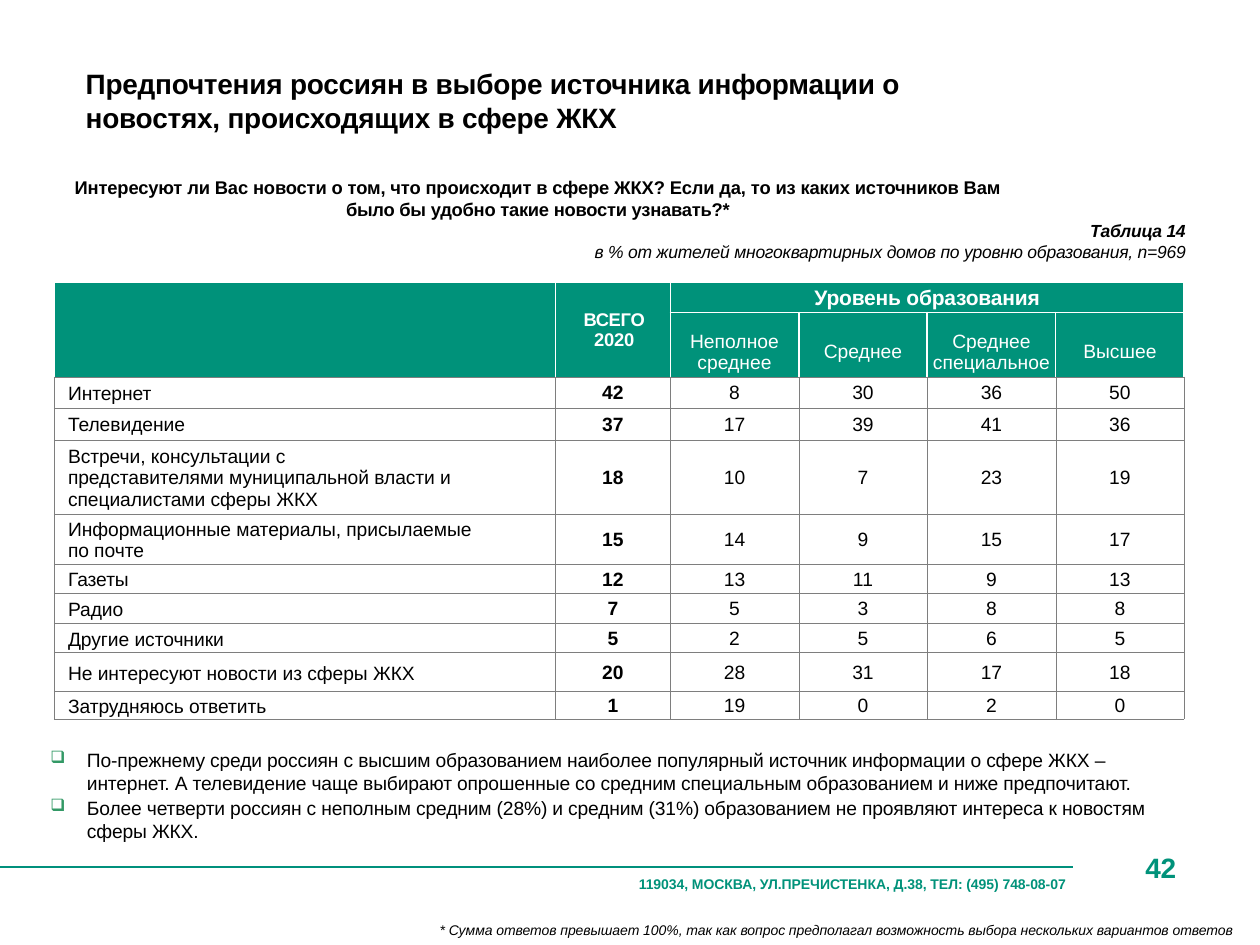
"""Build a slide on the sources people prefer for housing news, by education."""
from dataclasses import dataclass, field

from lxml import etree
from pptx import Presentation
from pptx.dml.color import RGBColor
from pptx.enum.shapes import MSO_CONNECTOR
from pptx.enum.text import MSO_ANCHOR, PP_ALIGN
from pptx.oxml.ns import qn
from pptx.util import Inches, Pt

LEFT, CENTER, RIGHT = PP_ALIGN.LEFT, PP_ALIGN.CENTER, PP_ALIGN.RIGHT
MIDDLE = MSO_ANCHOR.MIDDLE
STRAIGHT = MSO_CONNECTOR.STRAIGHT
GREEN, RULE, BULLET = "00927A", "00907C", "339966"
BLACK, WHITE, GREY = "000000", "FFFFFF", "7E7E7E"


@dataclass
class Para:
    text: str
    size: float
    bold: bool = False
    italic: bool = False
    color: str = BLACK
    align: int = LEFT
    spacing: int = -10
    before: float = 0
    bullet: str = ""


@dataclass
class Block:
    left: float
    top: float
    width: float
    height: float
    paras: list[Para]


@dataclass
class Row:
    label: str
    height: float
    values: list[int] = field(default_factory=list)


BLOCKS = [
    Block(0.68, 0.53, 6.61, 0.56, [
        Para("Предпочтения россиян в выборе источника информации о новостях, "
             "происходящих в сфере ЖКХ", 16, bold=True)]),
    Block(0.5, 1.4, 7.54, 0.35, [
        Para("Интересуют ли Вас новости о том, что происходит в сфере ЖКХ? "
             "Если да, то из каких источников Вам", 10.5, bold=True, align=CENTER, spacing=-5),
        Para("было бы удобно такие новости узнавать?*", 10.5, bold=True, align=CENTER)]),
    Block(0.5, 1.75, 8.91, 0.34, [
        Para("Таблица 14", 10, bold=True, italic=True, align=RIGHT),
        Para("в % от жителей многоквартирных домов по уровню образования, n=969",
             10, italic=True, align=RIGHT)]),
    Block(0.39, 5.94, 8.81, 0.75, [
        Para("По-прежнему среди россиян с высшим образованием наиболее популярный "
             "источник информации о сфере ЖКХ – интернет. А телевидение чаще выбирают "
             "опрошенные со средним специальным образованием и ниже предпочитают.",
             11, bullet="❑"),
        Para("Более четверти россиян с неполным средним (28%) и средним (31%) "
             "образованием не проявляют интереса к новостям сферы ЖКХ.",
             11, before=1, bullet="❑")]),
    Block(9.09, 6.75, 0.33, 0.28, [Para("42", 16, bold=True, color=GREEN)]),
    Block(5.07, 6.95, 3.48, 0.15, [
        Para("119034, МОСКВА, УЛ.ПРЕЧИСТЕНКА, Д.38, ТЕЛ: (495) 748-08-07",
             8, bold=True, color=GREEN, spacing=-5)]),
    Block(3.49, 7.31, 6.43, 0.15, [
        Para("* Сумма ответов превышает 100%, так как вопрос предполагал возможность "
             "выбора нескольких вариантов ответов", 8, italic=True, spacing=-5)]),
]
COLUMNS = [3.98, 0.91, 1.02, 1.02, 1.02, 1.02]
HEADER_HEIGHTS = [0.24, 0.51]
LEVELS = ["Неполное среднее", "Среднее", "Среднее специальное", "Высшее"]
ROWS = [
    Row("Интернет", 0.25, [42, 8, 30, 36, 50]),
    Row("Телевидение", 0.25, [37, 17, 39, 41, 36]),
    Row("Встречи, консультации с\nпредставителями муниципальной власти и "
        "специалистами сферы ЖКХ", 0.59, [18, 10, 7, 23, 19]),
    Row("Информационные материалы, присылаемые по почте", 0.4, [15, 14, 9, 15, 17]),
    Row("Газеты", 0.23, [12, 13, 11, 9, 13]),
    Row("Радио", 0.24, [7, 5, 3, 8, 8]),
    Row("Другие источники", 0.23, [5, 2, 5, 6, 5]),
    Row("Не интересуют новости из сферы ЖКХ", 0.31, [20, 28, 31, 17, 18]),
    Row("Затрудняюсь ответить", 0.22, [1, 19, 0, 2, 0]),
]


def rgb(color: str) -> RGBColor:
    return RGBColor.from_string(color)


def apply(target, values: dict) -> None:
    for name, value in values.items():
        setattr(target, name, value)


def add_bullet(p, char: str) -> None:
    pPr = p._p.get_or_add_pPr()
    pPr.set("marL", str(Inches(0.3)))
    pPr.set("indent", str(Inches(-0.29)))
    color = etree.SubElement(pPr, qn("a:buClr"))
    etree.SubElement(color, qn("a:srgbClr"), val=BULLET)
    etree.SubElement(pPr, qn("a:buSzPct"), val="88000")
    etree.SubElement(pPr, qn("a:buChar"), char=char)


def write(tf, paras: list[Para]) -> None:
    for i, para in enumerate(paras):
        p = tf.add_paragraph() if i else tf.paragraphs[0]
        p.alignment = para.align
        if para.before:
            p.space_before = Pt(para.before)
        if para.bullet:
            add_bullet(p, para.bullet)
        r = p.add_run()
        r.text = para.text
        apply(r.font, {"name": "Arial", "size": Pt(para.size),
                       "bold": para.bold, "italic": para.italic})
        r.font.color.rgb = rgb(para.color)
        r._r.get_or_add_rPr().set("spc", str(para.spacing))


def add_block(s, block: Block) -> None:
    box = s.shapes.add_textbox(Inches(block.left), Inches(block.top),
                               Inches(block.width), Inches(block.height))
    tf = box.text_frame
    apply(tf, {"word_wrap": True, "margin_left": 0, "margin_top": 0,
               "margin_right": 0, "margin_bottom": 0})
    write(tf, block.paras)


def set_borders(cell, color: str, width: float, bottom: tuple[str, float]) -> None:
    tcPr = cell._tc.get_or_add_tcPr()
    sides = {"lnL": (color, width), "lnR": (color, width),
             "lnT": (color, width), "lnB": bottom}
    for i, (tag, (shade, points)) in enumerate(sides.items()):
        ln = etree.Element(qn(f"a:{tag}"), w=str(Pt(points)))
        fill = etree.SubElement(ln, qn("a:solidFill"))
        etree.SubElement(fill, qn("a:srgbClr"), val=shade)
        tcPr.insert(i, ln)


def fill_cell(cell, paras: list[Para], left: float = 0, top: float = 0.01,
              right: float = 0) -> None:
    apply(cell, {"vertical_anchor": MIDDLE, "margin_left": Inches(left),
                 "margin_top": Inches(top), "margin_right": Inches(right),
                 "margin_bottom": 0})
    write(cell.text_frame, paras)


def add_header(table) -> None:
    for i in range(2):
        for j in range(len(COLUMNS)):
            cell = table.cell(i, j)
            cell.fill.solid()
            cell.fill.fore_color.rgb = rgb(GREEN)
            grey_bottom = i == 1 or j < 2
            set_borders(cell, WHITE, 1, (GREY, 0.25) if grey_bottom else (WHITE, 1))
    for j in range(2):
        table.cell(0, j).merge(table.cell(1, j))
    table.cell(0, 2).merge(table.cell(0, 5))
    fill_cell(table.cell(0, 0), [Para("", 10.5)])
    fill_cell(table.cell(0, 1), [Para(text, 10.5, bold=True, color=WHITE, align=CENTER)
                                 for text in ("ВСЕГО", "2020")], left=0.02)
    fill_cell(table.cell(0, 2), [Para("Уровень образования", 12, bold=True,
                                      color=WHITE, align=CENTER)])
    for j, level in enumerate(LEVELS, 2):
        fill_cell(table.cell(1, j), [Para(level, 11, color=WHITE, align=CENTER, spacing=0)],
                  top=0.12)


def add_results(s) -> None:
    heights = HEADER_HEIGHTS + [row.height for row in ROWS]
    frame = s.shapes.add_table(len(heights), len(COLUMNS), Inches(0.43), Inches(2.24),
                               Inches(sum(COLUMNS)), Inches(sum(heights)))
    table = frame.table
    apply(table, {"first_row": False, "horz_banding": False})
    for column, width in zip(table.columns, COLUMNS):
        column.width = Inches(width)
    for row, height in zip(table.rows, heights):
        row.height = Inches(height)
    add_header(table)
    for i, row in enumerate(ROWS, len(HEADER_HEIGHTS)):
        fill_cell(table.cell(i, 0), [Para(text, 11, spacing=-5)
                                     for text in row.label.split("\n")],
                  left=0.11, top=0.02, right=0.5)
        for j, value in enumerate(row.values, 1):
            fill_cell(table.cell(i, j), [Para(str(value), 11, bold=j == 1,
                                              align=CENTER, spacing=0)])
        for j in range(len(COLUMNS)):
            table.cell(i, j).fill.background()
            set_borders(table.cell(i, j), GREY, 0.25, (GREY, 0.25))


def add_rule(s) -> None:
    line = s.shapes.add_connector(STRAIGHT, 0, Inches(6.88), Inches(8.52), Inches(6.88))
    line.line.color.rgb = rgb(RULE)
    line.line.width = Pt(1.2)
    etree.SubElement(line._element.spPr, qn("a:effectLst"))


def main() -> None:
    prs = Presentation()
    apply(prs, {"slide_width": Inches(10), "slide_height": Inches(7.5)})
    s = prs.slides.add_slide(prs.slide_layouts[6])
    add_rule(s)
    for block in BLOCKS:
        add_block(s, block)
    add_results(s)
    prs.save("out.pptx")


if __name__ == "__main__":
    main()
